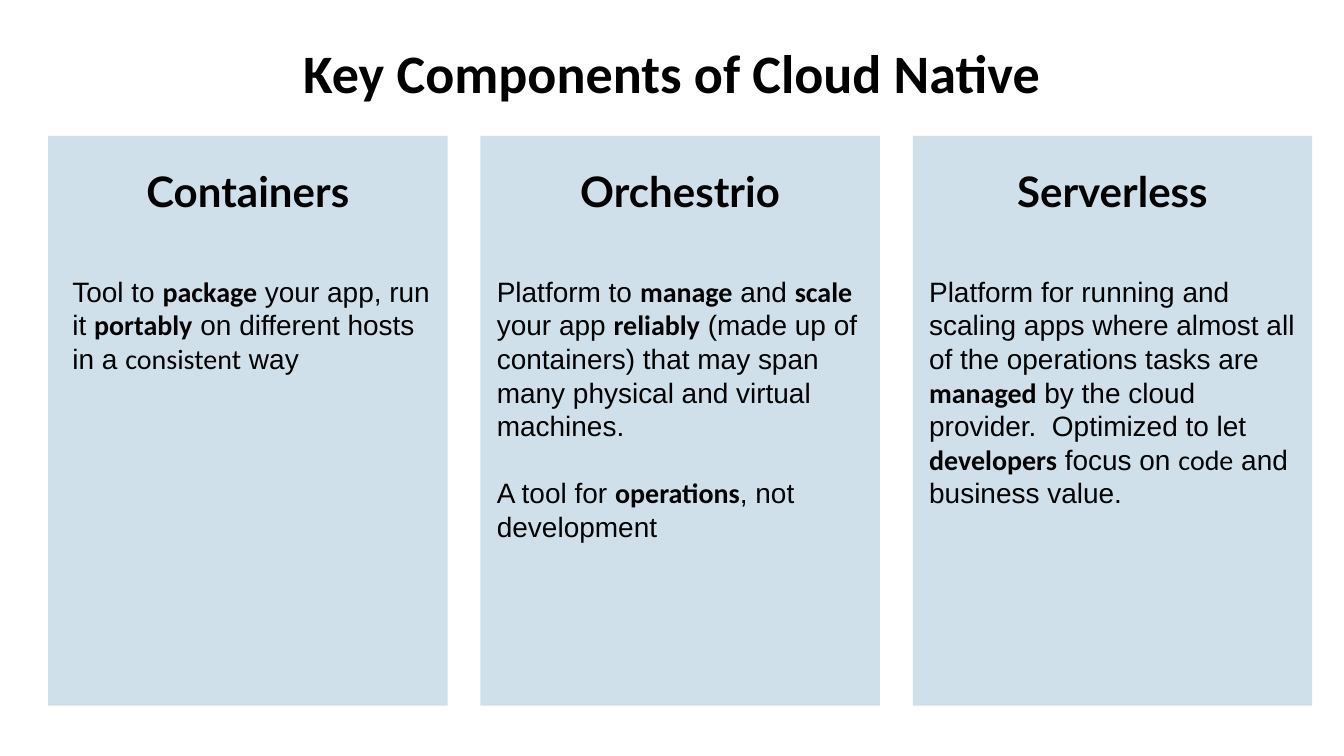
from pptx import Presentation
from pptx.dml.color import RGBColor
from pptx.enum.shapes import MSO_SHAPE as Shape
from pptx.enum.text import MSO_ANCHOR as Anchor, MSO_AUTO_SIZE as AutoSize, PP_ALIGN as Align
from pptx.util import Pt

BLACK = RGBColor(0x00, 0x00, 0x00)
PALE_BLUE = RGBColor(0xCF, 0xE0, 0xEA)

LEFT, STEP, PANEL_WIDTH = 25.8, 231.6, 214

# Run styles of the descriptions
PLAIN = {"name": "Arial", "bold": False}
KEY = {"name": "Calibri", "bold": True}
TERM = {"name": "Calibri", "bold": False}

# Each column: heading, description inset, then paragraphs made of styled runs
COLUMNS = [
    ("Containers", 13, [
        [("Tool to ", PLAIN), ("package", KEY), (" your app, run it ", PLAIN),
         ("portably", KEY), (" on different hosts in a ", PLAIN),
         ("consistent", TERM), (" way", PLAIN)],
    ]),
    ("Orchestrio", 8.8, [
        [("Platform to ", PLAIN), ("manage", KEY), (" and ", PLAIN), ("scale", KEY),
         (" your app ", PLAIN), ("reliably", KEY),
         (" (made up of containers) that may span many physical and virtual machines.", PLAIN)],
        [("A tool for ", PLAIN), ("operations", KEY), (", not development", PLAIN)],
    ]),
    ("Serverless", 8.8, [
        [("Platform for running and scaling apps where almost all of the operations tasks are ", PLAIN),
         ("managed", KEY), (" by the cloud provider.  Optimized to let ", PLAIN),
         ("developers", KEY), (" focus on ", PLAIN), ("code", TERM),
         (" and business value.", PLAIN)],
    ]),
]


def add_run(paragraph, text, size, style):
    run = paragraph.add_run()
    run.text = text
    run.font.color.rgb = BLACK
    for key, value in {"size": Pt(size), **style}.items():
        setattr(run.font, key, value)


def fill_placeholder(holder, box, text, size, font, anchor):
    holder.left, holder.top, holder.width, holder.height = map(Pt, box)
    frame = holder.text_frame
    frame_format = {"word_wrap": True, "auto_size": AutoSize.NONE, "vertical_anchor": anchor}
    for key, value in frame_format.items():
        setattr(frame, key, value)
    paragraph = frame.paragraphs[0]
    paragraph_format = {"alignment": Align.CENTER, "space_before": Pt(0), "line_spacing": 1.0}
    for key, value in paragraph_format.items():
        setattr(paragraph, key, value)
    add_run(paragraph, text, size, {"name": font, "bold": True})
    return paragraph


prs = Presentation()
prs.slide_width, prs.slide_height = Pt(720), Pt(405)
slide = prs.slides.add_slide(prs.slide_layouts[4])
shapes = slide.shapes

# Title
fill_placeholder(shapes.title, (34.5, 9.5, 651, 58.5),
                 "Key Components of Cloud Native", 29, "Calibri", Anchor.MIDDLE)

# The layout has four body placeholders, the slide needs three
*headings, spare = [holder for holder in slide.placeholders
                    if holder.placeholder_format.idx > 0]
spare.element.getparent().remove(spare.element)

for i, (heading, (name, inset, paragraphs)) in enumerate(zip(headings, COLUMNS)):
    x = LEFT + i * STEP

    # Panel, sent behind the placeholders
    panel = shapes.add_shape(Shape.RECTANGLE, Pt(x), Pt(72.8), Pt(PANEL_WIDTH), Pt(305.2))
    panel.shadow.inherit = False
    panel.fill.solid()
    panel.fill.fore_color.rgb = PALE_BLUE
    panel.line.fill.background()
    shapes.element.insert(2, panel.element)

    # Heading, without bullet or indent
    line = fill_placeholder(heading, (x + 4.4, 85, 205.2, 27.5), name, 22.5, "Lato", Anchor.TOP)
    props = line._p.get_or_add_pPr()
    props.set("marL", "0")
    props.set("indent", "0")
    props.insert_element_before(props.makeelement(
        "{http://schemas.openxmlformats.org/drawingml/2006/main}buNone", {}),
        "a:tabLst", "a:defRPr", "a:extLst")

    # Description
    description = shapes.add_textbox(Pt(x + inset), Pt(147), Pt(197), Pt(18 * 8)).text_frame
    frame_format = {"word_wrap": True, "margin_left": 0, "margin_right": 0,
                    "margin_top": 0, "margin_bottom": 0}
    for key, value in frame_format.items():
        setattr(description, key, value)
    for n, runs in enumerate(paragraphs):
        paragraph = description.add_paragraph() if n else description.paragraphs[0]
        paragraph.line_spacing = Pt(18)
        paragraph.space_before = Pt(18 if n else 0)
        for text, style in runs:
            add_run(paragraph, text, 15, style)

prs.save("out.pptx")
